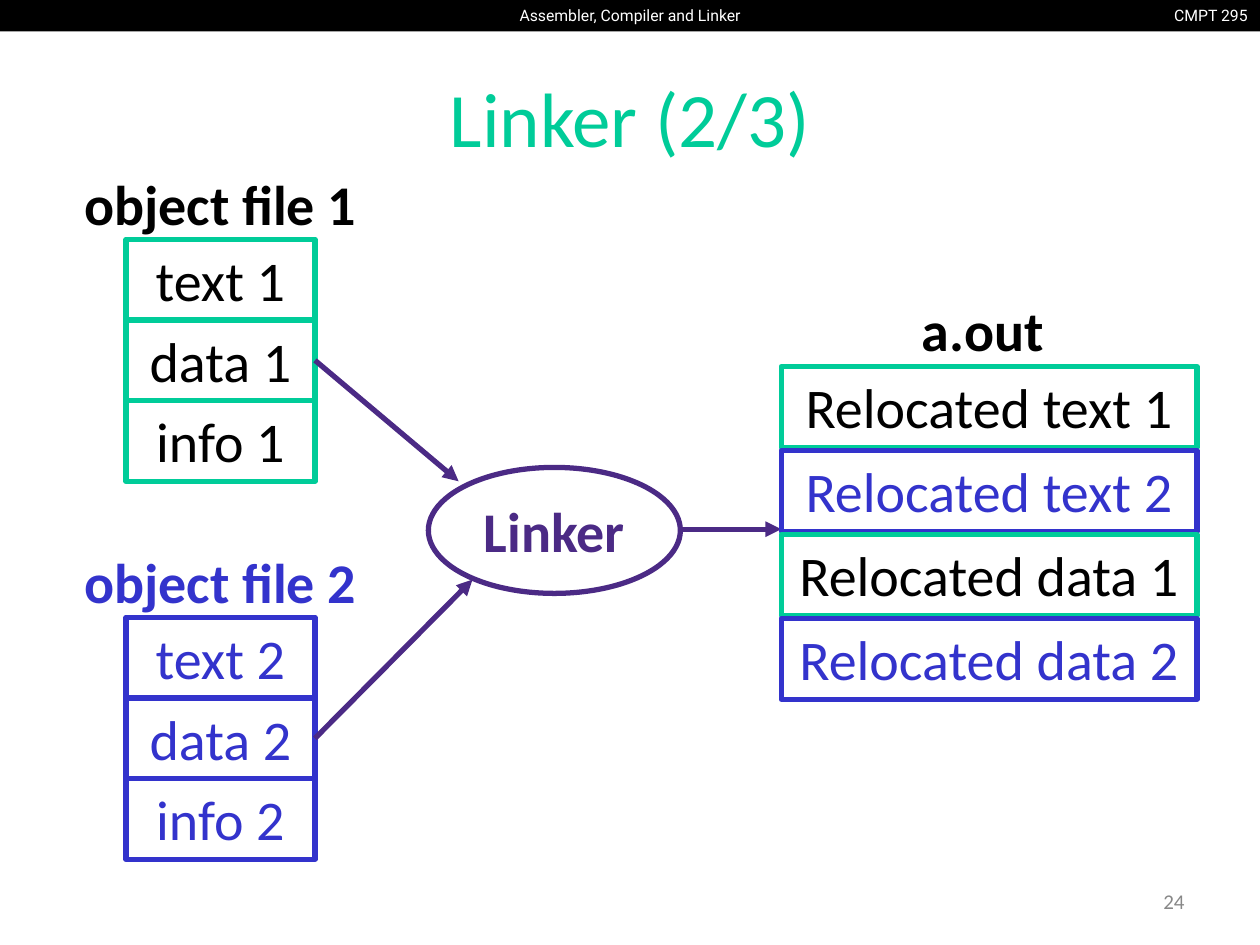
from lxml import etree
from pptx import Presentation
from pptx.dml.color import RGBColor
from pptx.enum.shapes import MSO_CONNECTOR, MSO_SHAPE
from pptx.enum.text import MSO_ANCHOR, PP_ALIGN
from pptx.oxml.ns import qn
from pptx.util import Inches, Pt

RECTANGLE, ELLIPSE = MSO_SHAPE.RECTANGLE, MSO_SHAPE.OVAL
STRAIGHT = MSO_CONNECTOR.STRAIGHT
CENTER, RIGHT = PP_ALIGN.CENTER, PP_ALIGN.RIGHT
TOP, MIDDLE = MSO_ANCHOR.TOP, MSO_ANCHOR.MIDDLE
RIGHT_SIDE = 3

BLACK, WHITE, GRAY = "000000", "FFFFFF", "888888"
GREEN, BLUE, PURPLE = "00CC99", "3333CC", "4B2A85"

presentation = Presentation()
presentation.slide_width, presentation.slide_height = Inches(10), Inches(7.5)
slide = presentation.slides.add_slide(presentation.slide_layouts[6])

# Grid: 100 columns by 75 rows
CELL = presentation.slide_width / 100
ROW_HEIGHT = 6.4


def color(hex_string):
    return RGBColor.from_string(hex_string)


def add_box(column, row, columns, rows, text="", text_color=BLACK, size=32, bold=False,
            kind=None, line=None, fill=None, align=CENTER, anchor=TOP,
            font="Calibri", wrap=True):
    place = [round(value * CELL) for value in (column, row, columns, rows)]
    if kind is None:
        shape = slide.shapes.add_textbox(*place)
    else:
        shape = slide.shapes.add_shape(kind, *place)
        shape.shadow.inherit = False
        if fill:
            shape.fill.solid()
            shape.fill.fore_color.rgb = color(fill)
        else:
            shape.fill.background()
        if line:
            shape.line.color.rgb = color(line)
            shape.line.width = Pt(3)
        else:
            shape.line.fill.background()
    if text:
        frame = shape.text_frame
        frame.word_wrap, frame.vertical_anchor = wrap, anchor
        paragraph = frame.paragraphs[0]
        paragraph.alignment = align
        run = paragraph.add_run()
        run.text = text
        run.font.name, run.font.size, run.font.bold = font, Pt(size), bold
        run.font.color.rgb = color(text_color)
    return shape


# Header bar
add_box(0, 0, 100, 2.5, kind=RECTANGLE, fill=BLACK)
add_box(91.9, 0, 8.1, 4, "CMPT 295", WHITE, 9, align=RIGHT, font="Roboto", wrap=False)
add_box(40, 0, 20, 2.5, "Assembler, Compiler and Linker", WHITE, 9, font="Roboto", wrap=False)

# Title and page number
add_box(5, 3, 90, 12.5, "Linker (2/3)", GREEN, 44, anchor=MIDDLE)
add_box(71.7, 69.5, 23.3, 4, "24", GRAY, 12, align=RIGHT, anchor=MIDDLE)

# Object files, each a stack of three sections
data_sections = []
for number, top, text_color, line in ((1, 13, BLACK, GREEN), (2, 43, BLUE, BLUE)):
    add_box(5, top, 25, ROW_HEIGHT, f"object file {number}", text_color, bold=True)
    for index, section in enumerate(("text", "data", "info")):
        box = add_box(10, top + 6 + index * ROW_HEIGHT, 15, ROW_HEIGHT,
                      f"{section} {number}", text_color, kind=RECTANGLE, line=line)
        if section == "data":
            data_sections.append(box)

# Linker
add_box(34, 37.1, 20, 10, "Linker", PURPLE, bold=True, kind=ELLIPSE, line=PURPLE, anchor=MIDDLE)

# Arrows into and out of the linker
arrows = (
    (25, 28.6, 36.4, 38.2, data_sections[0]),
    (25, 58.6, 37.5, 46, data_sections[1]),
    (54, 42, 62, 42, None),
)
for *ends, source in arrows:
    arrow = slide.shapes.add_connector(STRAIGHT, *[round(value * CELL) for value in ends])
    if source is not None:
        arrow.begin_connect(source, RIGHT_SIDE)
    arrow.line.color.rgb = color(PURPLE)
    arrow.line.width = Pt(3)
    etree.SubElement(arrow.line._get_or_add_ln(), qn("a:tailEnd"), type="triangle")
    etree.SubElement(arrow._element.spPr, qn("a:effectLst"))

# Executable, a stack of relocated sections
add_box(62, 23, 32, ROW_HEIGHT, "a.out", bold=True)
relocated = [(section, number) for section in ("text", "data") for number in (1, 2)]
for index, (section, number) in enumerate(relocated):
    text_color, line = (BLACK, GREEN) if number == 1 else (BLUE, BLUE)
    add_box(62, 29.1 + index * 20 / 3, 33, ROW_HEIGHT, f"Relocated {section} {number}",
            text_color, kind=RECTANGLE, line=line)

presentation.save("out.pptx")
